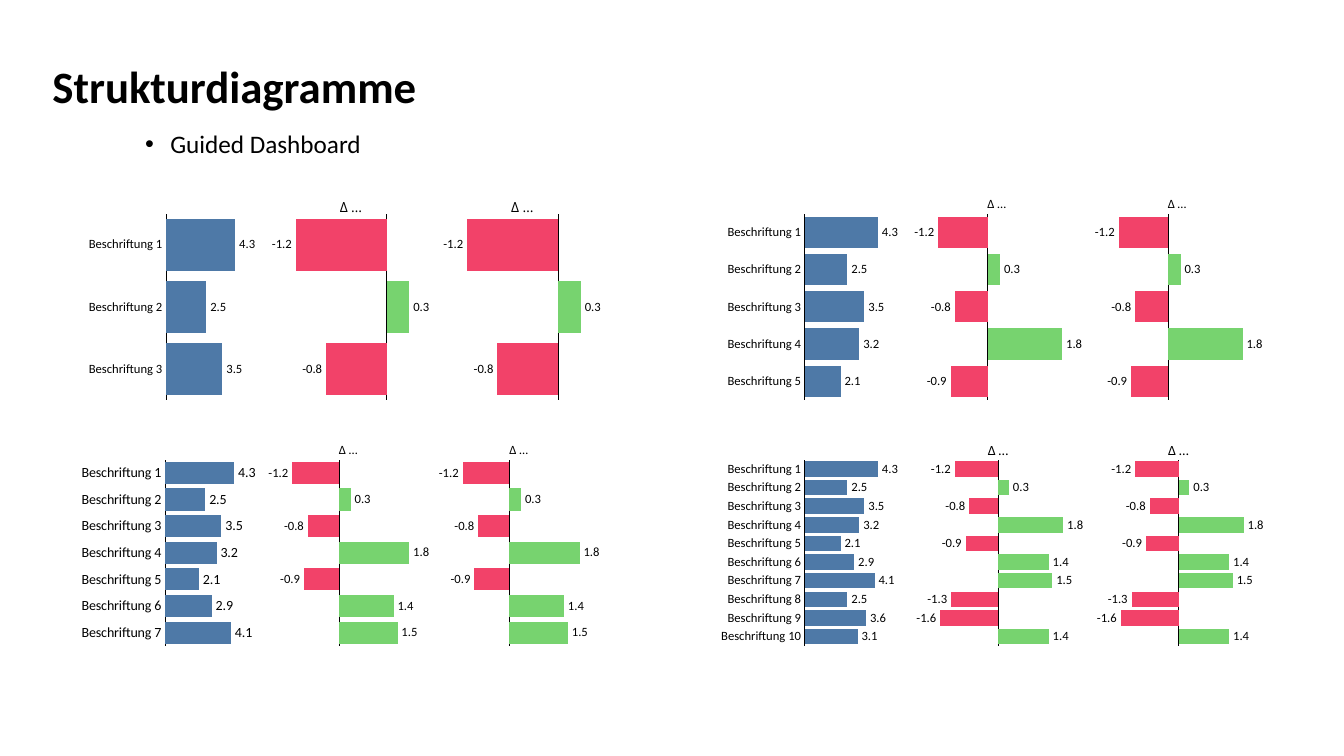
import lxml.etree
import pptx
import pptx.chart.data
import pptx.dml.color
import pptx.enum.chart
import pptx.enum.text
import pptx.oxml
import pptx.oxml.ns
import pptx.util

Inches = pptx.util.Inches
Pt = pptx.util.Pt
rgb = pptx.dml.color.RGBColor.from_string
qn = pptx.oxml.ns.qn

BLACK, BLUE, GREEN, RED = "000000", "4E79A7", "77D36F", "F24269"
STRUCTURE = [4.3, 2.5, 3.5, 3.2, 2.1, 2.9, 4.1, 2.5, 3.6, 3.1]
DEVIATION = [-1.2, 0.3, -0.8, 1.8, -0.9, 1.4, 1.5, -1.3, -1.6, 1.4]


def write(frame, text, size, font="Calibri", bold=False, spacing=None, bullet=None):
    paragraph = frame.paragraphs[0]
    paragraph.alignment = pptx.enum.text.PP_ALIGN.LEFT
    if spacing:
        paragraph.line_spacing = spacing
    if bullet:
        properties = paragraph._p.get_or_add_pPr()
        properties.set("marL", str(Inches(0.25)))
        properties.set("indent", str(-Inches(0.25)))
        for tag, key, value in (("a:buFont", "typeface", "Arial"), ("a:buChar", "char", bullet)):
            lxml.etree.SubElement(properties, qn(tag)).set(key, value)
    run = paragraph.add_run()
    run.text = text
    run.font.name, run.font.size, run.font.bold = font, Pt(size), bold
    run.font.color.rgb = rgb(BLACK)


def add_bars(place, categories, values, scale, layout, size):
    data = pptx.chart.data.CategoryChartData(number_format="#,##0.0")
    data.categories = categories
    data.add_series("Series 1", values)
    chart = slide.shapes.add_chart(
        pptx.enum.chart.XL_CHART_TYPE.BAR_CLUSTERED, *map(Inches, place), data).chart
    chart.has_legend = chart.has_title = False
    chart.font.name, chart.font.size = "Calibri", Pt(size)
    chart.font.color.rgb = rgb(BLACK)

    # Axes
    labels, scale_axis = chart.category_axis, chart.value_axis
    labels.reverse_order = True
    labels.major_tick_mark = pptx.enum.chart.XL_TICK_MARK.NONE
    labels.format.line.color.rgb = rgb(BLACK)
    labels.format.line.width = Pt(0.75)
    scale_axis.minimum_scale, scale_axis.maximum_scale = scale
    scale_axis.has_major_gridlines = scale_axis.visible = False

    # Bars and their values
    plot = chart.plots[0]
    plot.gap_width, plot.vary_by_categories = 20, False
    plot.has_data_labels = True
    numbers = plot.data_labels
    numbers.show_value = True
    numbers.number_format, numbers.number_format_is_linked = "#,##0.0", False
    numbers.position = pptx.enum.chart.XL_LABEL_POSITION.OUTSIDE_END
    series = plot.series[0]
    series.invert_if_negative = False
    series.format.fill.solid()
    series.format.fill.fore_color.rgb = rgb(BLUE if scale[0] == 0 else GREEN)
    for index, value in enumerate(values):
        if value < 0:
            fill = series.points[index].format.fill
            fill.solid()
            fill.fore_color.rgb = rgb(RED)

    # Fixed inner plot area
    area = chart._chartSpace.chart.plotArea
    for old in area.findall(qn("c:layout")):
        area.remove(old)
    area.insert(0, pptx.oxml.parse_xml(
        f'<c:layout {pptx.oxml.ns.nsdecls("c")}><c:manualLayout><c:layoutTarget val="inner"/>'
        '<c:xMode val="edge"/><c:yMode val="edge"/>'
        f'<c:x val="{layout[0]}"/><c:y val="0.138"/><c:w val="{layout[1]}"/><c:h val="0.797"/>'
        '</c:manualLayout></c:layout>'))
    return chart


presentation = pptx.Presentation()
presentation.slide_width, presentation.slide_height = Inches(13.33), Inches(7.5)
slide = presentation.slides.add_slide(presentation.slide_layouts[5])

# Heading
title = slide.shapes.title
title.left, title.top, title.width, title.height = map(Inches, (0.42, 0.56, 12.49, 0.64))
title.text_frame.vertical_anchor = pptx.enum.text.MSO_ANCHOR.MIDDLE
write(title.text_frame, "Strukturdiagramme", 32, bold=True, spacing=0.9)

subtitle = slide.shapes.add_textbox(*map(Inches, (1.34, 1.26, 11.99, 0.59))).text_frame
subtitle.word_wrap = True
write(subtitle, "Guided Dashboard", 18, spacing=0.9, bullet="•")

# Panels: left, top, bar count, structure width, deviation lefts and width,
# deviation scale, label size, heading size, heading font
panels = [
    (0.52, 1.8, 3, 2.08, (2.63, 4.33), 1.66, (-1.4, 0.4), 9, 10, "Open Sans"),
    (6.79, 1.8, 5, 2.2, (9.02, 10.81), 1.76, (-1.5, 2), 9, 9, "Calibri"),
    (0.51, 4.24, 7, 2.08, (2.63, 4.32), 1.66, (-1.5, 2), 10, 9, "Calibri"),
    (6.79, 4.24, 10, 2.2, (9.02, 10.81), 1.76, (-2, 2), 9, 10, "Calibri"),
]
for left, top, count, width, delta_lefts, delta_width, scale, size, heading, font in panels:
    numbers = range(1, count + 1)
    add_bars((left, top, width, 2.32), [f"Beschriftung {n}" for n in numbers],
             STRUCTURE[:count], (0, 5), (0.543, 0.383), size)
    for delta_left in delta_lefts:
        delta = add_bars((delta_left, top, delta_width, 2.32), [str(n) for n in numbers],
                         DEVIATION[:count], scale, (0.092, 0.816), 9)
        delta.category_axis.tick_label_position = pptx.enum.chart.XL_TICK_LABEL_POSITION.NONE
        delta.has_title = True
        write(delta.chart_title.text_frame, " ∆ …", heading, font=font)
        delta.chart_title.include_in_layout = False
        # Heading position within the chart
        heading_xml = delta.chart_title._element
        for old in heading_xml.findall(qn("c:layout")):
            heading_xml.remove(old)
        heading_xml.find(qn("c:tx")).addnext(pptx.oxml.parse_xml(
            f'<c:layout {pptx.oxml.ns.nsdecls("c")}><c:manualLayout>'
            '<c:xMode val="edge"/><c:yMode val="edge"/><c:x val="0.41"/><c:y val="0.05"/>'
            '</c:manualLayout></c:layout>'))

presentation.save("out.pptx")
